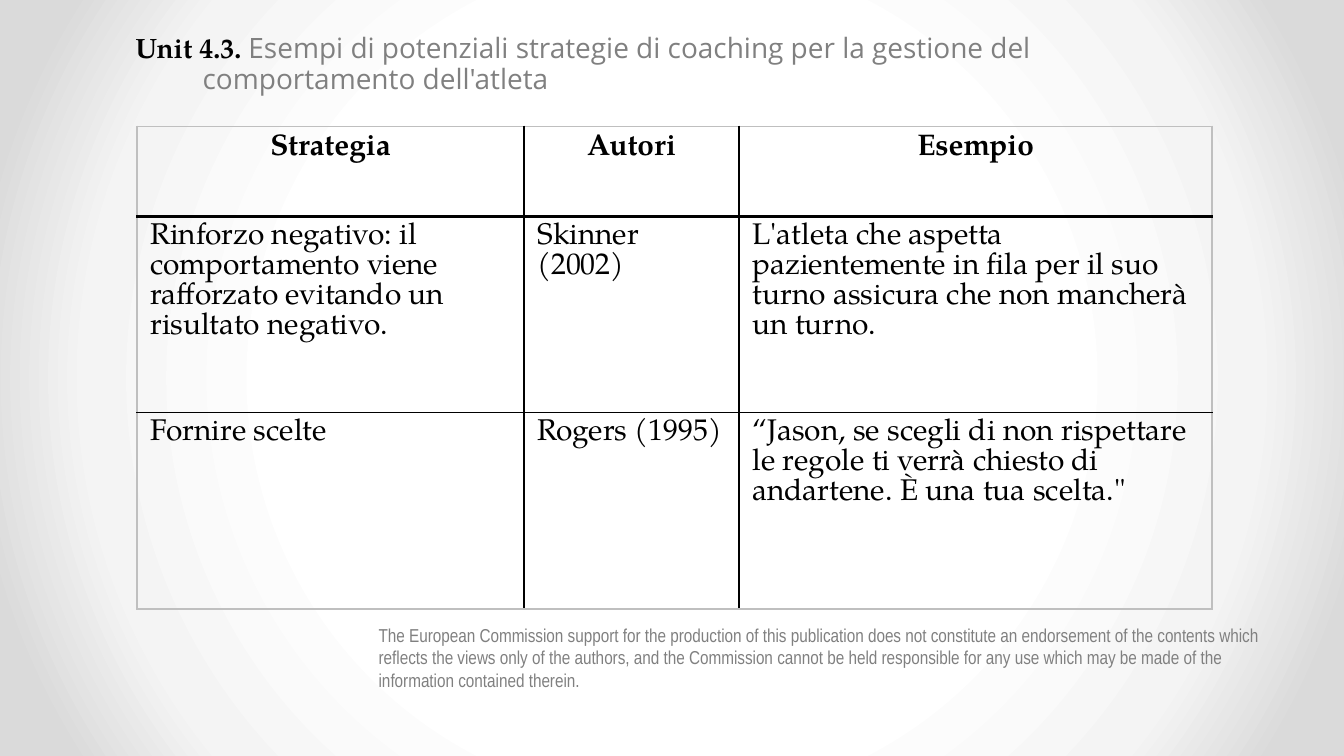
from pptx import Presentation
from pptx import util as u
from pptx.dml.color import RGBColor
from pptx.enum import text
from pptx.oxml import parse_xml
from pptx.oxml import ns

BLACK = RGBColor(0x00, 0x00, 0x00)
GREY = RGBColor(0x80, 0x80, 0x80)
FRAME = RGBColor(0xBF, 0xBF, 0xBF)
GLOW = [(50, RGBColor(0xFF, 0xFF, 0xFF)), (76, RGBColor(0xF4, 0xF4, 0xF4)),
        (92, RGBColor(0xDA, 0xDA, 0xDA))]
SERIF, SANS, NARROW = "TeX Gyre Pagella", "Open Sans", "Arial Narrow"

COLUMNS = [207.4, 115.2, 253.4]
ROWS = [48.2, 105.2, 105.2]
STRATEGIES = [
    ("Strategia", "Autori", "Esempio"),
    ("Rinforzo negativo: il comportamento viene rafforzato evitando un risultato negativo.",
     "Skinner (2002)",
     "L'atleta che aspetta pazientemente in fila per il suo turno assicura che non mancherà un turno."),
    ("Fornire scelte", "Rogers (1995)",
     "“Jason, se scegli di non rispettare le regole ti verrà chiesto di andartene. È una tua scelta.\""),
]
DISCLAIMER = ("The European Commission support for the production of this publication does not "
              "constitute an endorsement of the contents which reflects the views only of the "
              "authors, and the Commission cannot be held responsible for any use which may be "
              "made of the information contained therein.")


def style(font, name, size, color, bold=False):
    font.name, font.size, font.bold = name, u.Pt(size), bold
    font.color.rgb = color


def add_text_box(page, left, top, width, height):
    box = page.shapes.add_textbox(u.Pt(left), u.Pt(top), u.Pt(width), u.Pt(height))
    box.text_frame.word_wrap = True
    return box.text_frame.paragraphs[0]


def paint_background(page):
    """Radial glow from the centre of the page."""
    page.background.fill.gradient()
    gradient = page.element.find(".//" + ns.qn("a:gradFill"))
    for child in list(gradient):
        gradient.remove(child)
    stops = "".join(f'<a:gs pos="{pos * 1000}"><a:srgbClr val="{color}"/></a:gs>'
                    for pos, color in GLOW)
    gradient.append(parse_xml(f'<a:gsLst {ns.nsdecls("a")}>{stops}</a:gsLst>'))
    gradient.append(parse_xml(
        f'<a:path {ns.nsdecls("a")} path="circle">'
        '<a:fillToRect l="50000" t="50000" r="50000" b="50000"/></a:path>'))


def add_title(page, left, top, width, height):
    para = add_text_box(page, left, top, width, height)
    para.line_spacing = 0.9
    # Hanging indent
    properties = para._p.get_or_add_pPr()
    properties.set("marL", str(u.Pt(36)))
    properties.set("indent", str(u.Pt(-36)))
    for words, name, color, bold in [
            ("Unit 4.3. ", SERIF, BLACK, True),
            ("Esempi di potenziali strategie di coaching per la gestione del "
             "comportamento dell'atleta", SANS, GREY, False)]:
        span = para.add_run()
        span.text = words
        style(span.font, name, 15, color, bold)


def set_borders(cell, row, column):
    """Grey outer frame, black inner rules, heavier rule below the header."""
    edges = {"lnL": column == 0, "lnR": column == len(COLUMNS) - 1,
             "lnT": row == 0, "lnB": row == len(ROWS) - 1}
    properties = cell._tc.get_or_add_tcPr()
    for position, (edge, outer) in enumerate(edges.items()):
        heavy = (row, edge) in [(0, "lnB"), (1, "lnT")]
        width = u.Pt(1.5 if heavy else 1)
        color = FRAME if outer else BLACK
        properties.insert(position, parse_xml(
            f'<a:{edge} {ns.nsdecls("a")} w="{width}"><a:solidFill>'
            f'<a:srgbClr val="{color}"/></a:solidFill></a:{edge}>'))


def add_strategy_table(page, left, top, width, height):
    table = page.shapes.add_table(len(ROWS), len(COLUMNS), u.Pt(left), u.Pt(top),
                                  u.Pt(width), u.Pt(height)).table
    table.horz_banding = False
    for column, size in zip(table.columns, COLUMNS):
        column.width = u.Pt(size)
    for row, size in zip(table.rows, ROWS):
        row.height = u.Pt(size)
    for r, entries in enumerate(STRATEGIES):
        for c, words in enumerate(entries):
            cell = table.cell(r, c)
            cell.fill.background()
            set_borders(cell, r, c)
            cell.text_frame.text = words
            para = cell.text_frame.paragraphs[0]
            para.line_spacing = u.Pt(16)
            para.alignment = text.PP_ALIGN.CENTER if r == 0 else text.PP_ALIGN.LEFT
            style(para.runs[0].font, SERIF, 16, BLACK, bold=r == 0)


def add_disclaimer(page, left, top, width, height):
    para = add_text_box(page, left, top, width, height)
    para.text = DISCLAIMER
    style(para.runs[0].font, NARROW, 10, GREY)


def main():
    deck = Presentation()
    deck.slide_width, deck.slide_height = u.Pt(720), u.Pt(405)
    page = deck.slides.add_slide(deck.slide_layouts[6])
    paint_background(page)
    add_disclaimer(page, 195.8, 330.5, 499, 48.2)
    add_strategy_table(page, 73.4, 67.7, sum(COLUMNS), sum(ROWS))
    add_title(page, 65.5, 15.1, 590.4, 43.9)
    deck.save("out.pptx")


if __name__ == "__main__":
    main()
